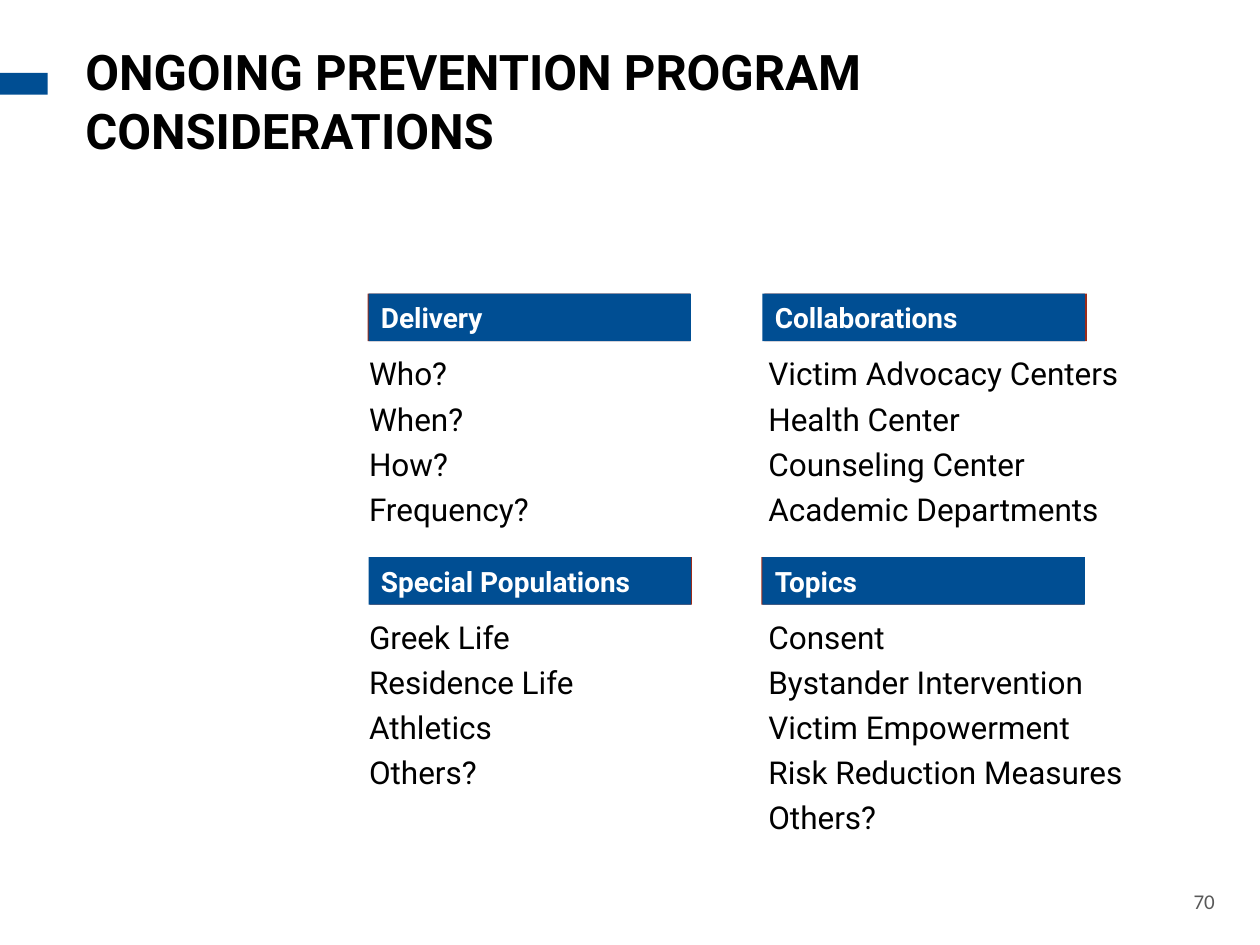
from pptx import Presentation
from pptx.dml.color import RGBColor
from pptx.enum.shapes import MSO_SHAPE
from pptx.enum.text import MSO_ANCHOR, PP_ALIGN
from pptx.util import Cm, Pt

RECTANGLE = MSO_SHAPE.RECTANGLE
TOP, MIDDLE = MSO_ANCHOR.TOP, MSO_ANCHOR.MIDDLE
LEFT, RIGHT = PP_ALIGN.LEFT, PP_ALIGN.RIGHT

BLUE, RED = "004E93", "9A2C1A"
TITLE = {"name": "Roboto", "size": Pt(28), "bold": True, "color": "000000"}
HEADING = {"name": "Roboto", "size": Pt(16), "bold": True, "color": "FFFFFF"}
ITEM = {"name": "Roboto", "size": Pt(18), "bold": False, "color": "000000"}
NUMBER = {"name": "Calibri", "size": Pt(12), "bold": False, "color": "595959"}

HEADING_WIDTH, HEADING_HEIGHT = 6.5, 0.96
COLUMNS = [
    {"left": 7.43, "list_left": 7.19, "list_width": 6.99},
    {"left": 15.37, "list_left": 15.24, "list_width": 8.05},
]
ROW_TOPS = [5.92, 11.23]
PANELS = [
    [
        ("Delivery", -0.02, ["Who?", "When?", "How?", "Frequency?"]),
        ("Collaborations", 0.04, ["Victim Advocacy Centers", "Health Center",
                                  "Counseling Center", "Academic Departments"]),
    ],
    [
        ("Special Populations", 0.02, ["Greek Life", "Residence Life",
                                       "Athletics", "Others?"]),
        ("Topics", -0.02, ["Consent", "Bystander Intervention", "Victim Empowerment",
                           "Risk Reduction Measures", "Others?"]),
    ],
]


def set_color(target, color):
    """Give a font colour or a fill colour object a hex colour."""
    target.rgb = RGBColor.from_string(color)


def add_bar(page, left, top, width, height, color):
    """Add a plain filled rectangle."""
    bar = page.shapes.add_shape(RECTANGLE, Cm(left), Cm(top), Cm(width), Cm(height))
    bar.shadow.inherit = False
    bar.fill.solid()
    set_color(bar.fill.fore_color, color)
    bar.line.fill.background()
    return bar


def write_lines(box, lines, style, anchor=TOP, align=LEFT):
    """Write one paragraph for each line in a single style."""
    frame = box.text_frame
    frame.word_wrap = True
    frame.vertical_anchor = anchor
    for index, line in enumerate(lines):
        para = frame.add_paragraph() if index else frame.paragraphs[0]
        para.alignment = align
        para.space_before = Pt(4.2 if index else 0)
        span = para.add_run()
        span.text = line
        for key, value in style.items():
            if key == "color":
                set_color(span.font.color, value)
            else:
                setattr(span.font, key, value)


def add_text(page, left, top, width, height, lines, style, **layout):
    """Add a wrapping text box."""
    box = page.shapes.add_textbox(Cm(left), Cm(top), Cm(width), Cm(height))
    write_lines(box, lines, style, **layout)


def add_title(page, left, top, width, height):
    """Add the title and the accent bar at the page edge."""
    add_bar(page, 0, top + 0.76, 0.96, 0.44, BLUE)
    add_text(page, left, top, width, height,
             ["ONGOING PREVENTION PROGRAM CONSIDERATIONS"], TITLE)


def add_panel(page, column, top, heading, backing_shift, items):
    """Add a heading bar over its backing, with the list below."""
    left = column["left"]
    add_bar(page, left + backing_shift, top, HEADING_WIDTH, HEADING_HEIGHT, RED)
    bar = add_bar(page, left, top, HEADING_WIDTH, HEADING_HEIGHT, BLUE)
    write_lines(bar, [heading], HEADING, anchor=MIDDLE)
    add_text(page, column["list_left"], top + 1.1, column["list_width"], 3.38, items, ITEM)


def add_page_number(page, left, top, width, height):
    """Add the page number at the lower right."""
    add_text(page, left, top, width, height, ["70"], NUMBER, anchor=MIDDLE, align=RIGHT)


def main():
    """Build and save the deck."""
    deck = Presentation()
    deck.slide_width, deck.slide_height = Cm(25.4), Cm(19.05)
    page = deck.slides.add_slide(deck.slide_layouts[6])
    add_title(page, 1.47, 0.71, 23.7, 4.88)
    for top, row in zip(ROW_TOPS, PANELS):
        for column, panel in zip(COLUMNS, row):
            add_panel(page, column, top, *panel)
    add_page_number(page, 23.52, 17.78, 1.22, 0.76)
    deck.save("out.pptx")


if __name__ == "__main__":
    main()
